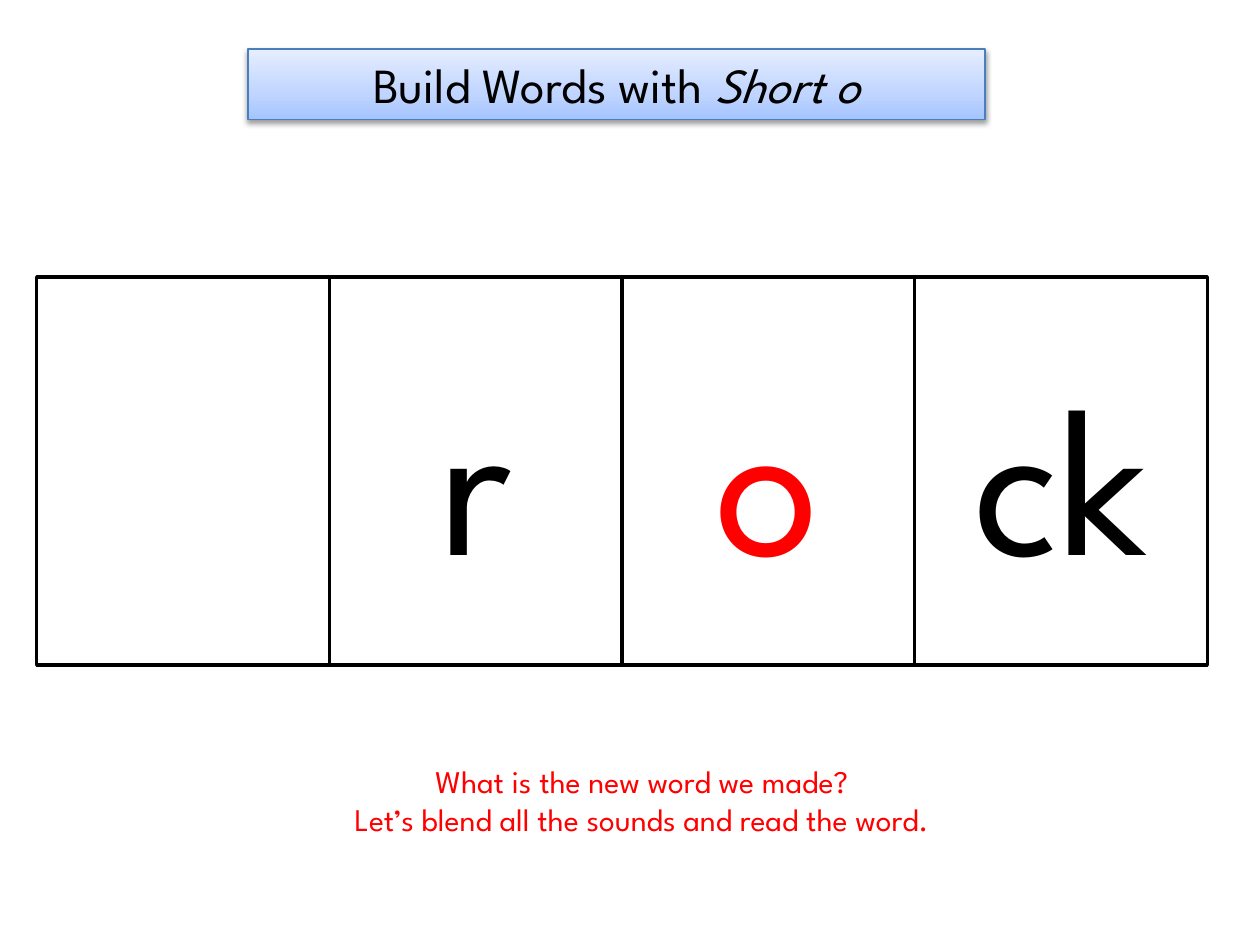
"""Build a phonics slide that blends letter tiles into a short-o word."""
from copy import deepcopy

from lxml.etree import SubElement
from pptx import Presentation
from pptx.dml.color import RGBColor
from pptx.enum.shapes import MSO_SHAPE
from pptx.enum.text import MSO_ANCHOR, MSO_AUTO_SIZE, PP_ALIGN
from pptx.oxml.ns import qn
from pptx.util import Cm, Pt

FONT = "League Spartan"
COLORS = {
    "black": "000000",
    "white": "FFFFFF",
    "red": "FF0000",
    "banner_line": "4B7EBC",
    "banner_bottom": "A4C4FF",
    "banner_middle": "BFD4FF",
    "banner_top": "E6EEFF",
}
BANNER_STOPS = [(0, "banner_bottom"), (0.35, "banner_middle"), (1, "banner_top")]
TILES = [("", "black"), ("r", "black"), ("o", "red"), ("ck", "black")]
TILE_LEFT, TILE_TOP, TILE_WIDTH, TILE_HEIGHT = 0.74, 5.59, 5.9, 7.82


def rgb(name):
    return RGBColor.from_string(COLORS[name])


def style_text(text_frame, size, color):
    for paragraph in text_frame.paragraphs:
        paragraph.alignment = PP_ALIGN.CENTER
        for run in paragraph.runs:
            run.font.name = FONT
            run.font.size = Pt(size)
            run.font.color.rgb = rgb(color)


def add_box(slide, left, top, width, height, line_color, line_width):
    shape = slide.shapes.add_shape(
        MSO_SHAPE.RECTANGLE, Cm(left), Cm(top), Cm(width), Cm(height))
    shape.shadow.inherit = False
    shape.line.color.rgb = rgb(line_color)
    shape.line.width = Pt(line_width)
    shape.text_frame.vertical_anchor = MSO_ANCHOR.MIDDLE
    return shape


def fill_gradient(shape, stops, angle):
    shape.fill.gradient()
    shape.fill.gradient_angle = angle
    stop_list = shape._element.spPr.find(qn("a:gradFill")).find(qn("a:gsLst"))
    stop_list.append(deepcopy(stop_list[0]))
    for gradient_stop, (position, color) in zip(shape.fill.gradient_stops, stops):
        gradient_stop.position = position
        gradient_stop.color.rgb = rgb(color)


def add_shadow(shape):
    effects = shape._element.spPr.find(qn("a:effectLst"))
    shadow = SubElement(
        effects, qn("a:outerShdw"), blurRad=str(Pt(3.1)), dist=str(Pt(1.6)),
        dir="5400000", rotWithShape="0")
    color = SubElement(shadow, qn("a:srgbClr"), val=COLORS["black"])
    SubElement(color, qn("a:alpha"), val="38000")


def add_banner(slide, text, emphasis):
    banner = add_box(slide, 5, 0.99, 14.86, 1.42, "banner_line", 0.75)
    fill_gradient(banner, BANNER_STOPS, 90)
    add_shadow(banner)
    banner.text_frame.text = text
    run = banner.text_frame.paragraphs[0].add_run()
    run.text = emphasis
    run.font.italic = True
    style_text(banner.text_frame, 28, "black")


def add_tile(slide, index, letters, color):
    left = TILE_LEFT + index * TILE_WIDTH
    tile = add_box(slide, left, TILE_TOP, TILE_WIDTH, TILE_HEIGHT, "black", 2)
    tile.fill.solid()
    tile.fill.fore_color.rgb = rgb("white")
    if letters:
        tile.text_frame.text = letters
        style_text(tile.text_frame, 120, color)


def add_prompt(slide, text):
    prompt = slide.shapes.add_textbox(Cm(4.09), Cm(15.24), Cm(17.7), Cm(1.8))
    text_frame = prompt.text_frame
    text_frame.word_wrap = True
    text_frame.auto_size = MSO_AUTO_SIZE.SHAPE_TO_FIT_TEXT
    text_frame.text = text
    style_text(text_frame, 18, "red")


def main():
    presentation = Presentation()
    presentation.slide_width, presentation.slide_height = Cm(25.4), Cm(19.05)
    slide = presentation.slides.add_slide(presentation.slide_layouts[6])
    add_banner(slide, "Build Words with ", "Short o")
    for index, (letters, color) in enumerate(TILES):
        add_tile(slide, index, letters, color)
    add_prompt(slide, "What is the new word we made?\n"
                      "Let’s blend all the sounds and read the word.")
    presentation.save("out.pptx")


if __name__ == "__main__":
    main()
